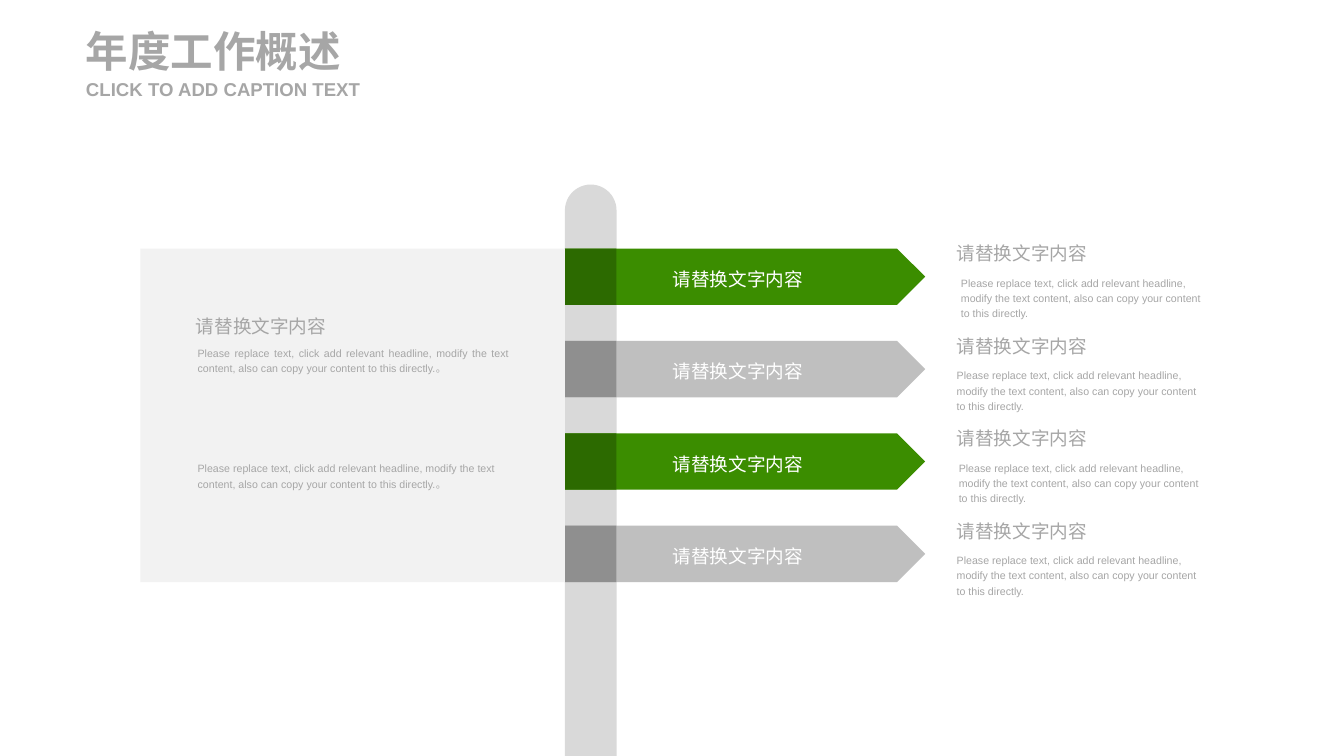
from pptx import Presentation
from pptx.dml.color import RGBColor
from pptx.enum import shapes, text
from pptx.util import Pt

HUES = {
    "column": "D9D9D9",
    "panel": "F2F2F2",
    "green": "3B8D00",
    "forest": "2C6A00",
    "silver": "BFBFBF",
    "steel": "8F8F8F",
    "gray": "A6A6A6",
    "white": "FFFFFF",
}
KIND = shapes.MSO_SHAPE
ALIGN = text.PP_ALIGN
LABEL = "请替换文字内容"
BODY = ("Please replace text, click add relevant headline, modify the text "
        "content, also can copy your content to this directly.")
LEFT, TOP, STEP = 425.5, 187.2, 69.6
WIDTH, HIGH = 38.9, 42.5


def write(frame, words, size, hue="gray", align=ALIGN.LEFT, bold=False, lead=1.2):
    para = frame.paragraphs[0]
    para.alignment = align
    para.line_spacing = lead
    run = para.add_run()
    run.text = words
    run.font.name = "Arial"
    run.font.size = Pt(size)
    run.font.bold = bold
    run.font.color.rgb = RGBColor.from_string(HUES[hue])


def block(slide, kind, box, hue):
    shape = slide.shapes.add_shape(kind, *map(Pt, box))
    shape.shadow.inherit = False
    shape.fill.solid()
    shape.fill.fore_color.rgb = RGBColor.from_string(HUES[hue])
    shape.line.fill.background()
    return shape


def label(slide, box, words, size, wrap=True, **style):
    frame = slide.shapes.add_textbox(*map(Pt, box)).text_frame
    frame.word_wrap = wrap
    write(frame, words, size, **style)
    return frame


def title(slide, box, words, size):
    frame = label(slide, box, words, size, bold=True, lead=1.0)
    frame.vertical_anchor = text.MSO_ANCHOR.MIDDLE
    frame.margin_left = frame.margin_right = 0
    frame.margin_top = frame.margin_bottom = 0


def banner(slide, top, hue, dark):
    arrow = block(slide, KIND.PENTAGON, (LEFT, top, 271.4, HIGH), hue)
    frame = arrow.text_frame
    frame.word_wrap = True
    frame.vertical_anchor = text.MSO_ANCHOR.MIDDLE
    write(frame, LABEL, 14, hue="white", align=ALIGN.CENTER)
    block(slide, KIND.RECTANGLE, (LEFT, top, WIDTH, HIGH), dark)


def note(slide, top, shift):
    left = 713.5
    label(slide, (left, top - 11.5, 114, 26), LABEL, 14, wrap=False)
    label(slide, (left + shift, top + 15.9, 196.6, 41), BODY, 8)


def panel(slide):
    block(slide, KIND.RECTANGLE, (105.8, TOP, LEFT - 105.8, 3 * STEP + HIGH), "panel")
    label(slide, (140.4, 230.2, 121, 26), LABEL, 14)
    for top, align in ((255.8, ALIGN.JUSTIFY), (342.7, ALIGN.LEFT)):
        label(slide, (141.8, top, 249, 29.5), BODY + "。", 8, align=align)


def main():
    deck = Presentation()
    deck.slide_width, deck.slide_height = Pt(1012.3), Pt(569.5)
    slide = deck.slides.add_slide(deck.slide_layouts[6])

    column = block(slide, KIND.ROUND_2_SAME_RECTANGLE,
                   (LEFT, 139, WIDTH, 430.5), "column")
    column.adjustments[0] = 0.5
    column.adjustments[1] = 0

    pairs = (("green", "forest"), ("silver", "steel"))
    for row, shift in enumerate((3.2, 0, 1.6, 0)):
        top = TOP + row * STEP
        banner(slide, top, *pairs[row % 2])
        note(slide, top, shift)

    panel(slide)
    title(slide, (64.8, 18.7, 221, 38.9), "年度工作概述", 32)
    title(slide, (64.8, 58.5, 221, 17), "CLICK TO ADD CAPTION TEXT", 14)
    deck.save("out.pptx")


if __name__ == "__main__":
    main()
